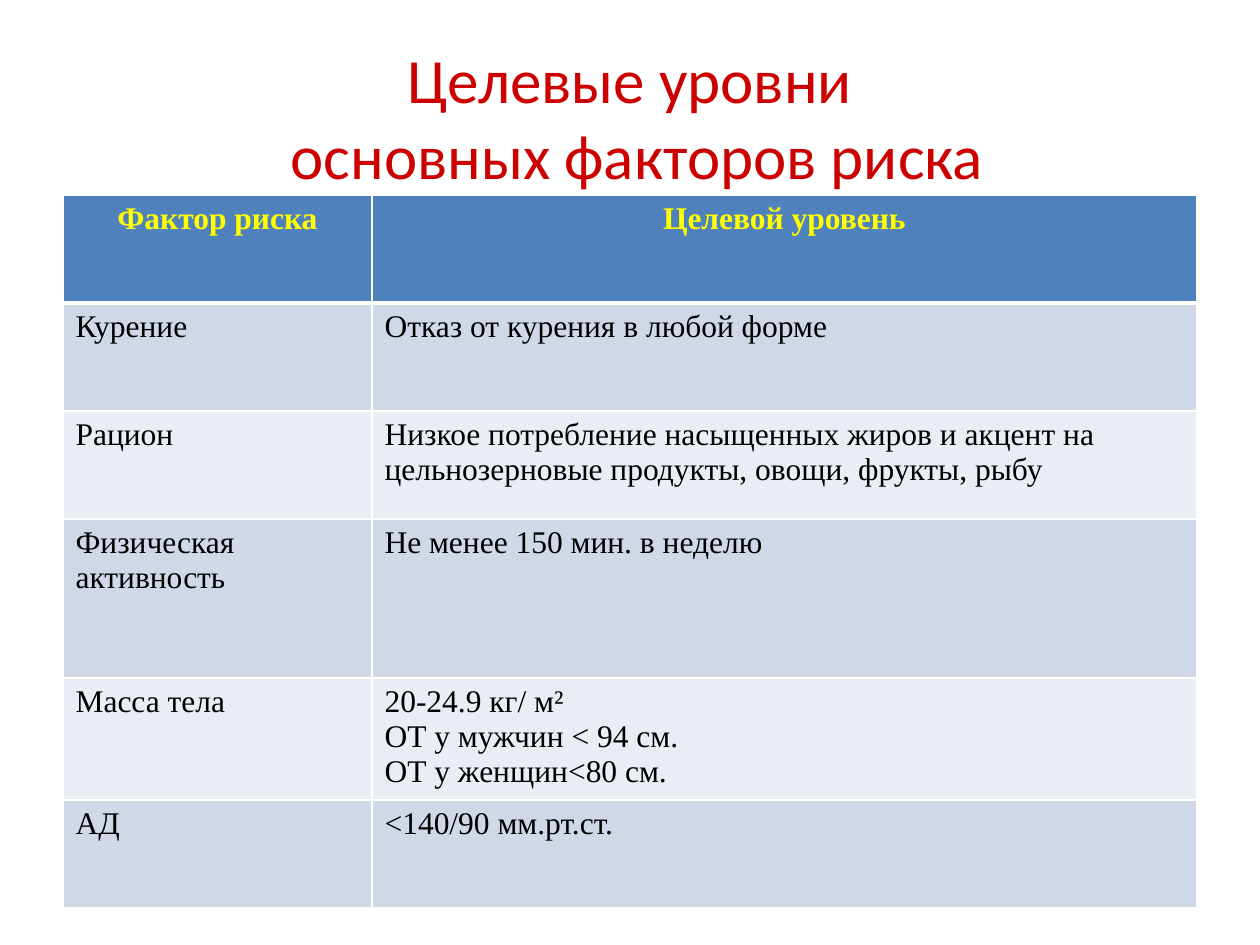
import dataclasses

import pptx
import pptx.dml.color
import pptx.enum.text
import pptx.oxml
import pptx.oxml.ns
import pptx.util

RGB = pptx.dml.color.RGBColor
ALIGN = pptx.enum.text.PP_ALIGN
PX = 914400 // 126

WHITE = RGB(0xFF, 0xFF, 0xFF)
BLACK = RGB(0x00, 0x00, 0x00)
RED = RGB(0xCC, 0x00, 0x00)
YELLOW = RGB(0xFF, 0xFF, 0x00)
BLUE = RGB(0x4F, 0x81, 0xBD)
BANDS = (RGB(0xE9, 0xED, 0xF4), RGB(0xD0, 0xD8, 0xE8))

LEFT, WIDTH = 63, 1134
COLS = (309, 825)
TITLE = ("Целевые уровни", " основных факторов риска")


@dataclasses.dataclass(frozen=True)
class Row:
    factor: str
    target: str
    height: int = 108


ROWS = (
    Row("Фактор риска", "Целевой уровень"),
    Row("Курение", "Отказ от курения в любой форме"),
    Row("Рацион", "Низкое потребление насыщенных жиров и акцент на "
        "цельнозерновые продукты, овощи, фрукты, рыбу"),
    Row("Физическая активность", "Не менее 150 мин. в неделю", 159),
    Row("Масса тела", "20-24.9 кг/ м²\nОТ у мужчин < 94 см.\nОТ у женщин<80 см.", 122),
    Row("АД", "<140/90 мм.рт.ст."),
)


def px(count: int) -> int:
    return count * PX


def set_font(par, name: str, size: int, color: RGB, bold: bool = False) -> None:
    font = par.font
    font.name, font.size, font.bold = name, pptx.util.Pt(size), bold
    font.color.rgb = color


def add_edge(cell, side: str, points: int) -> None:
    """Draw one white cell border; call it before the cell is filled."""
    space = pptx.oxml.ns.nsdecls("a")
    cell._tc.get_or_add_tcPr().append(pptx.oxml.parse_xml(
        f'<a:ln{side} {space} w="{pptx.util.Pt(points)}"><a:solidFill>'
        f'<a:srgbClr val="{WHITE}"/></a:solidFill></a:ln{side}>'))


def fill_cell(cell, text: str, index: int) -> None:
    head = index == 0
    edges = {"L": 1, "R": 1, "T": 3 if index == 1 else 1, "B": 3 if head else 1}
    for side, points in edges.items():
        add_edge(cell, side, points)
    cell.fill.solid()
    cell.fill.fore_color.rgb = BLUE if head else BANDS[index % 2]
    cell.text = text
    for par in cell.text_frame.paragraphs:
        par.alignment = ALIGN.CENTER if head else ALIGN.LEFT
        set_font(par, "Times New Roman", 18, YELLOW if head else BLACK, head)


def add_title(slide) -> None:
    title = slide.shapes.title
    title.left, title.top = px(LEFT), px(38)
    title.width, title.height = px(WIDTH), px(157)
    frame = title.text_frame
    frame.vertical_anchor = pptx.enum.text.MSO_ANCHOR.MIDDLE
    par = frame.paragraphs[0]
    par.alignment = ALIGN.CENTER
    set_font(par, "Calibri", 36, RED)
    par.add_run().text = TITLE[0]
    par.add_line_break()
    par.add_run().text = TITLE[1]


def add_table(slide) -> None:
    height = sum(row.height for row in ROWS)
    table = slide.shapes.add_table(
        len(ROWS), len(COLS), px(LEFT), px(195), px(WIDTH), px(height)).table
    for column, width in zip(table.columns, COLS):
        column.width = px(width)
    for index, row in enumerate(ROWS):
        table.rows[index].height = px(row.height)
        for col, text in enumerate((row.factor, row.target)):
            fill_cell(table.cell(index, col), text, index)


def main() -> None:
    deck = pptx.Presentation()
    deck.slide_width, deck.slide_height = px(1260), px(945)
    slide = deck.slides.add_slide(deck.slide_layouts[5])
    add_title(slide)
    add_table(slide)
    deck.save("out.pptx")


if __name__ == "__main__":
    main()
